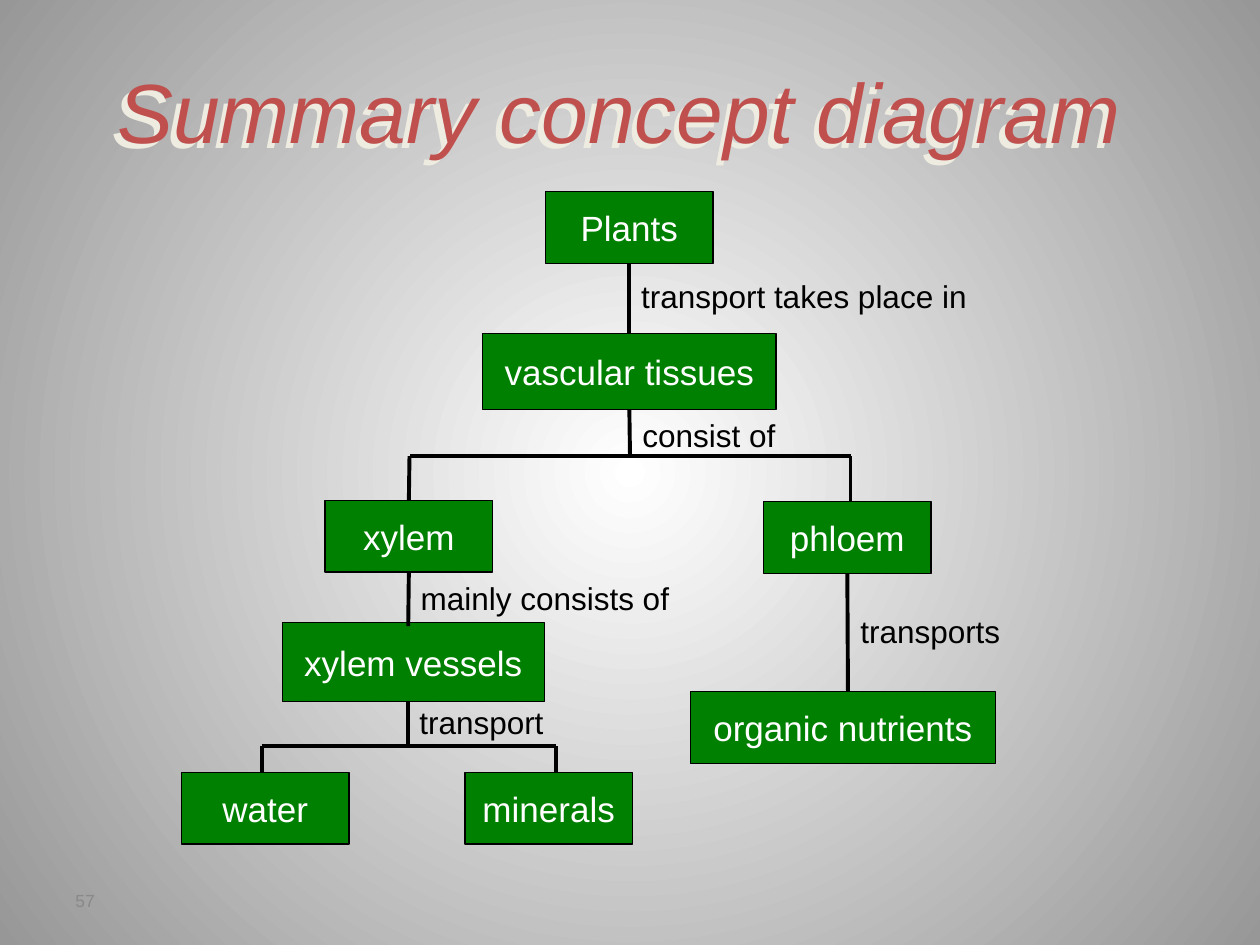
from lxml import etree
from pptx import Presentation
from pptx.dml.color import RGBColor
from pptx.enum.shapes import MSO_CONNECTOR, MSO_SHAPE
from pptx.enum.text import MSO_ANCHOR, MSO_AUTO_SIZE, PP_ALIGN
from pptx.oxml import parse_xml
from pptx.oxml.ns import nsdecls, qn
from pptx.util import Inches, Pt

STRAIGHT = MSO_CONNECTOR.STRAIGHT
RECTANGLE = MSO_SHAPE.RECTANGLE
MIDDLE, TOP = MSO_ANCHOR.MIDDLE, MSO_ANCHOR.TOP
NO_AUTOFIT = MSO_AUTO_SIZE.NONE
LEFT, CENTER = PP_ALIGN.LEFT, PP_ALIGN.CENTER
TOP_SIDE, BOTTOM_SIDE = 0, 2

THEME = {
    "font": "Arial",
    "title": RGBColor(0xC0, 0x50, 0x4D),
    "title_shadow": "EEECE1",
    "box": RGBColor(0x00, 0x80, 0x00),
    "box_text": RGBColor(0xFF, 0xFF, 0xFF),
    "ink": RGBColor(0x00, 0x00, 0x00),
    "number": RGBColor(0x89, 0x89, 0x89),
    "center": RGBColor(0xFF, 0xFF, 0xFF),
    "edge": RGBColor(0x97, 0x97, 0x97),
    "title_size": Pt(48),
    "box_size": Pt(20),
    "label_size": Pt(18),
    "number_size": Pt(10),
}


def write_text(shape, text, size, color, alignment=LEFT, anchor=TOP):
    frame = shape.text_frame
    frame.text = text
    frame.word_wrap = True
    frame.auto_size = NO_AUTOFIT
    frame.vertical_anchor = anchor
    paragraph = frame.paragraphs[0]
    paragraph.alignment = alignment
    paragraph.font.name = THEME["font"]
    paragraph.font.size = size
    paragraph.font.color.rgb = color
    return paragraph


presentation = Presentation()
presentation.slide_width = Inches(10)
presentation.slide_height = Inches(7.5)
slide = presentation.slides.add_slide(presentation.slide_layouts[5])

background = slide.background.fill
background.gradient()
for stop, name in zip(background.gradient_stops, ("center", "edge")):
    stop.color.rgb = THEME[name]
gradient = slide.element.find(".//" + qn("a:gradFill"))
gradient.replace(
    gradient.find(qn("a:lin")),
    parse_xml(
        f'<a:path {nsdecls("a")} path="circle">'
        '<a:fillToRect l="50000" t="50000" r="50000" b="50000"/></a:path>'
    ),
)

title = slide.shapes.title
title.left, title.top = Inches(0.83), Inches(0.42)
title.width, title.height = Inches(8.77), Inches(0.9)
paragraph = write_text(title, "Summary concept diagram", THEME["title_size"], THEME["title"])
paragraph.font.italic = True
title.element.spPr.append(
    parse_xml(
        f'<a:effectLst {nsdecls("a")}><a:outerShdw dist="57150" dir="8100000" algn="ctr" rotWithShape="0">'
        f'<a:srgbClr val="{THEME["title_shadow"]}"/></a:outerShdw></a:effectLst>'
    )
)

concepts = [
    ("Plants", 4.33, 1.52, 1.33, 0.57),
    ("vascular tissues", 3.83, 2.65, 2.33, 0.6),
    ("xylem", 2.58, 3.97, 1.33, 0.57),
    ("phloem", 6.06, 3.98, 1.33, 0.57),
    ("xylem vessels", 2.24, 4.94, 2.08, 0.63),
    ("organic nutrients", 5.48, 5.49, 2.42, 0.57),
    ("water", 1.44, 6.13, 1.33, 0.57),
    ("minerals", 3.69, 6.13, 1.33, 0.57),
]
boxes = {}
for text, left, top, width, height in concepts:
    box = slide.shapes.add_shape(RECTANGLE, Inches(left), Inches(top), Inches(width), Inches(height))
    box.shadow.inherit = False
    box.fill.solid()
    box.fill.fore_color.rgb = THEME["box"]
    box.line.color.rgb = THEME["ink"]
    box.line.width = Pt(0.75)
    write_text(box, text, THEME["box_size"], THEME["box_text"], CENTER, MIDDLE)
    box.text_frame.word_wrap = False
    boxes[text] = box

links = [
    (5, 2.09, 5, 2.65, "Plants", "vascular tissues"),
    (5, 3.25, 5, 3.62, "vascular tissues", None),
    (6.75, 3.62, 3.25, 3.62, None, None),
    (6.75, 3.62, 6.75, 3.98, None, None),
    (3.25, 3.62, 3.25, 3.97, None, "xylem"),
    (3.24, 4.55, 3.24, 4.97, "xylem", None),
    (6.73, 4.55, 6.73, 5.49, "phloem", None),
    (3.24, 5.57, 3.24, 5.92, None, None),
    (4.41, 5.92, 2.08, 5.92, None, None),
    (4.41, 5.92, 4.41, 6.13, None, None),
    (2.08, 5.92, 2.08, 6.13, None, None),
]
for start_x, start_y, end_x, end_y, source, target in links:
    link = slide.shapes.add_connector(
        STRAIGHT, Inches(start_x), Inches(start_y), Inches(end_x), Inches(end_y)
    )
    if source:
        link.begin_connect(boxes[source], BOTTOM_SIDE)
    if target:
        link.end_connect(boxes[target], TOP_SIDE)
    link.line.color.rgb = THEME["ink"]
    link.line.width = Pt(2.25)
    etree.SubElement(link.element.spPr, qn("a:effectLst"))

labels = [
    ("transport takes place in", 4.99, 2.15, 3.43),
    ("consist of", 5, 3.25, 1.33),
    ("mainly consists of", 3.24, 4.55, 2.58),
    ("transports", 6.73, 4.81, 1.33),
    ("transport", 3.23, 5.53, 1.33),
]
for text, left, top, width in labels:
    label = slide.shapes.add_textbox(Inches(left), Inches(top), Inches(width), Inches(0.4))
    write_text(label, text, THEME["label_size"], THEME["ink"])

number = slide.shapes.add_textbox(Inches(0.5), Inches(6.95), Inches(2.33), Inches(0.4))
write_text(number, "57", THEME["number_size"], THEME["number"], anchor=MIDDLE)

presentation.save("out.pptx")
